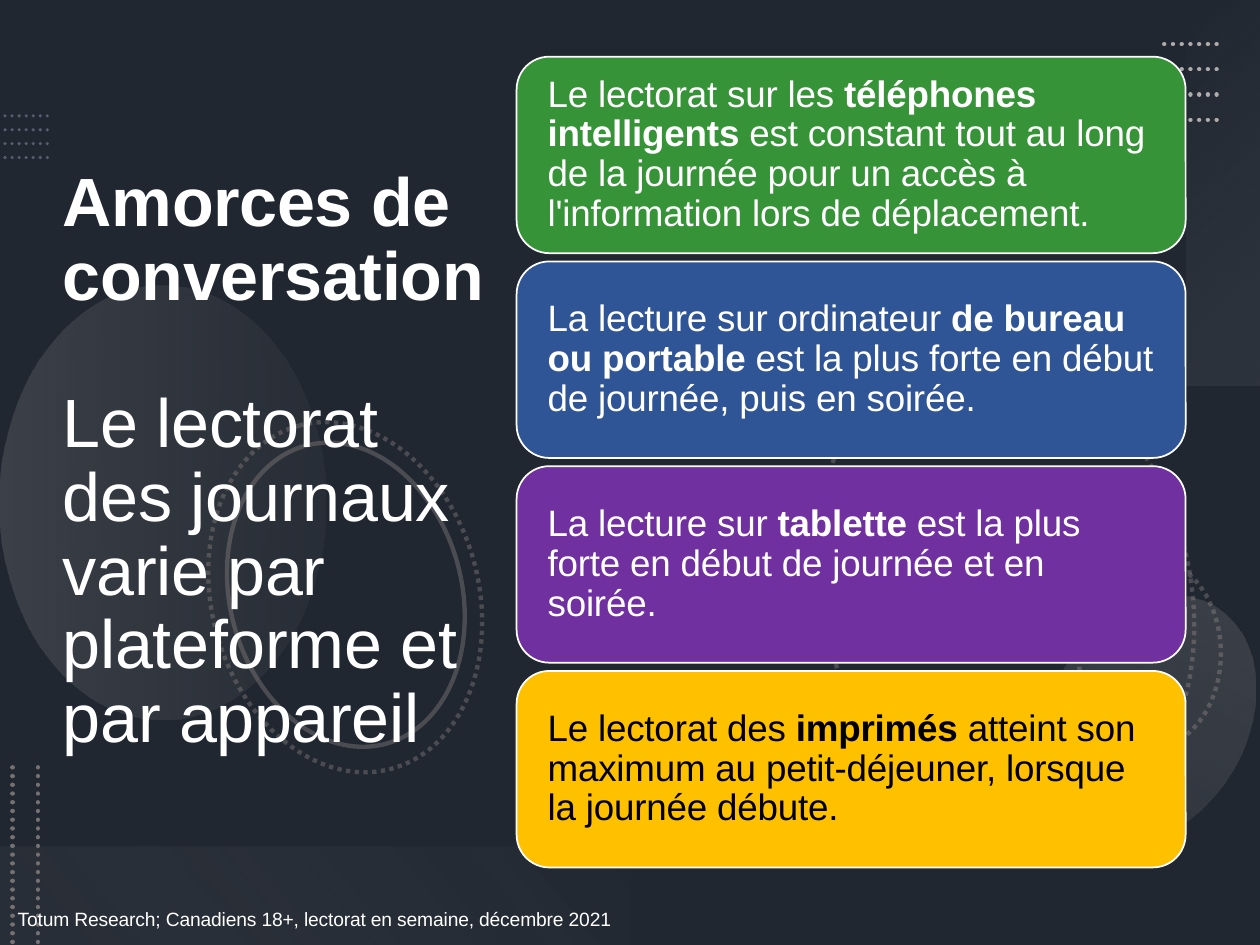
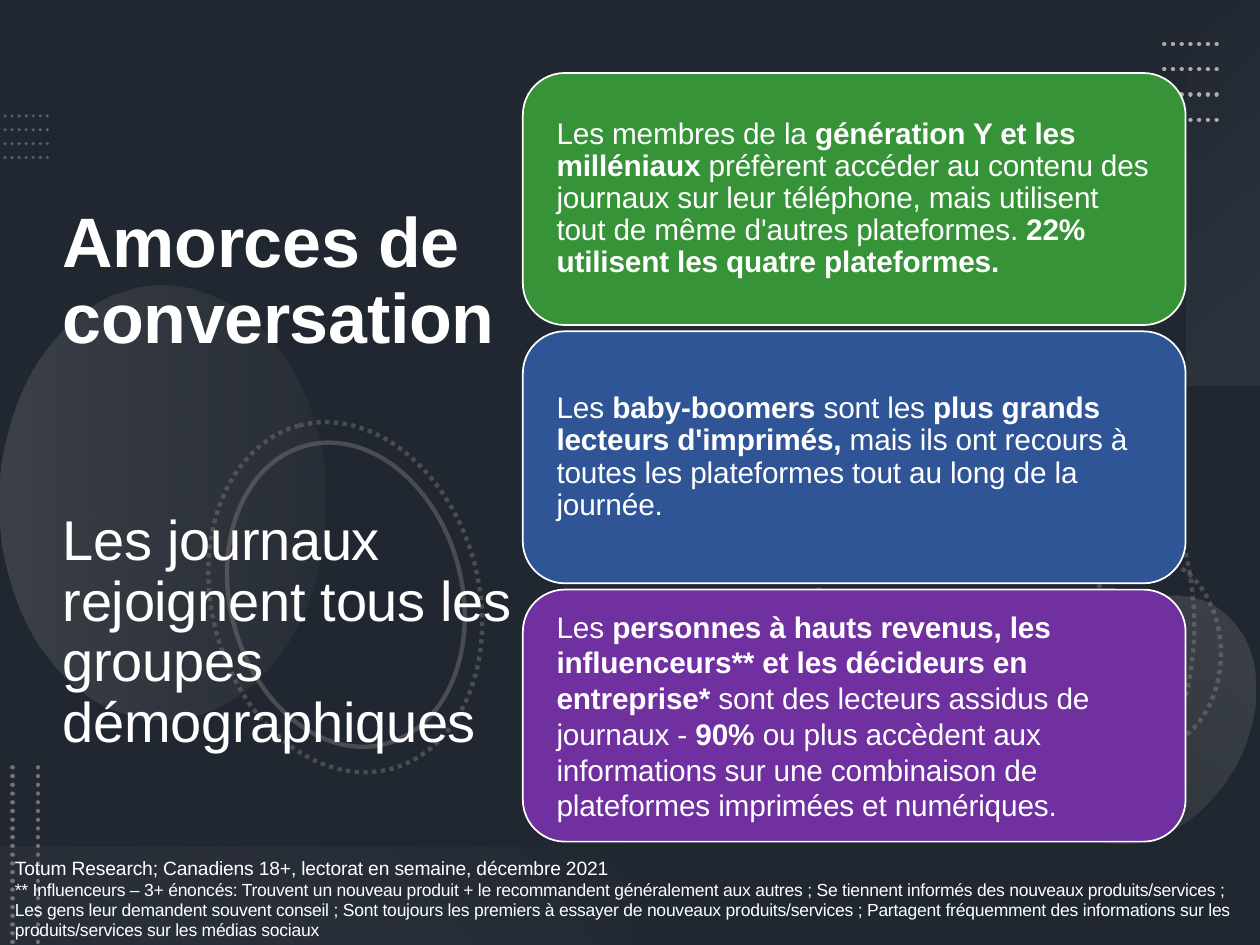
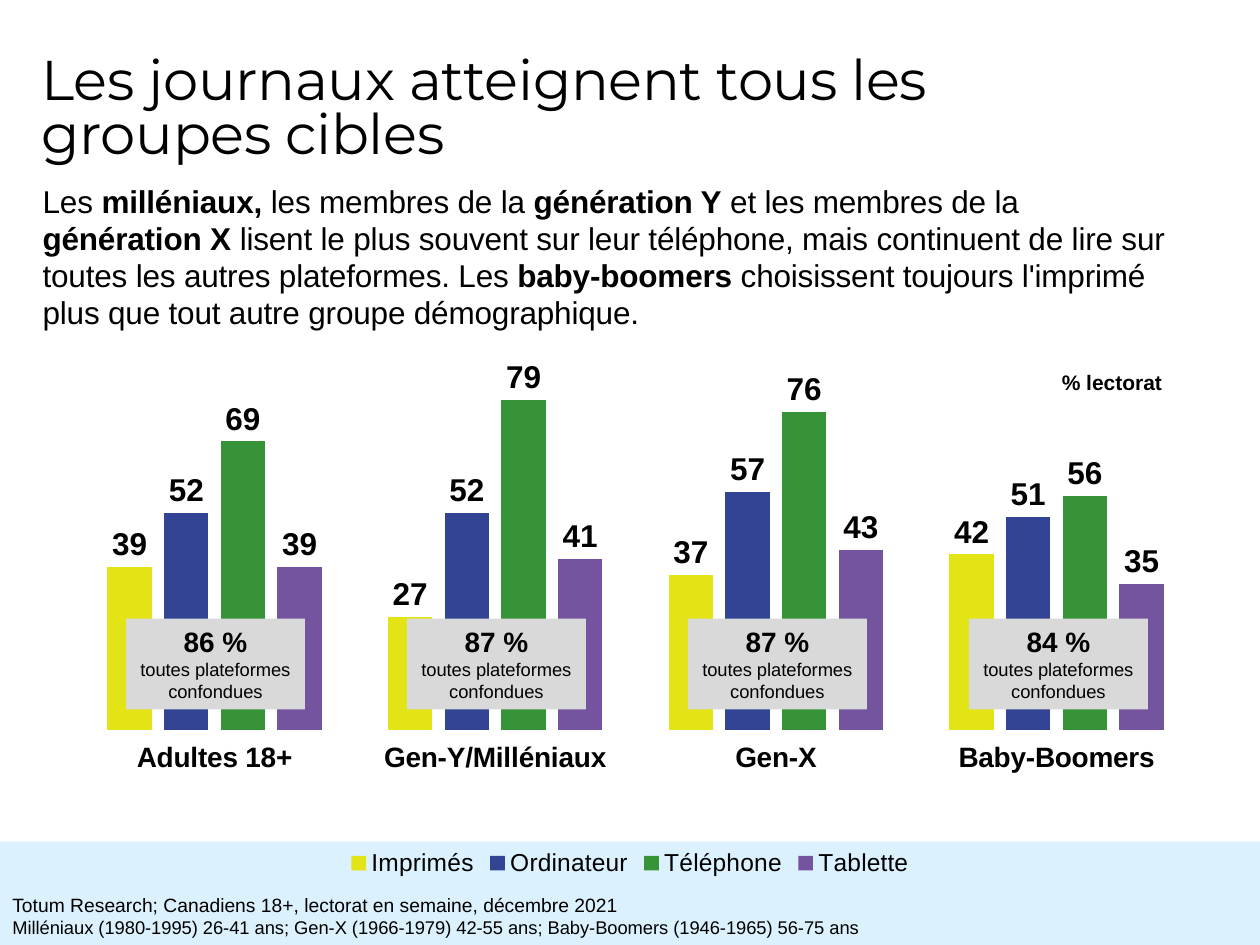
import pptx
import pptx.util
import pptx.dml.color
import pptx.chart.data
import pptx.enum.chart
import pptx.enum.dml
import pptx.enum.shapes
import pptx.enum.text
import pptx.oxml
import pptx.oxml.ns
from lxml import etree

Inches = pptx.util.Inches
Pt = pptx.util.Pt
RGB = pptx.dml.color.RGBColor
SHAPE = pptx.enum.shapes.MSO_SHAPE
ALIGN = pptx.enum.text.PP_ALIGN
ANCHOR = pptx.enum.text.MSO_ANCHOR
qn = pptx.oxml.ns.qn

WIDTH, HEIGHT = 10, 7.5
WHITE, BLACK = RGB(255, 255, 255), RGB(0, 0, 0)
SLATE, BLUE_GREY = RGB(0x44, 0x54, 0x6A), RGB(0x84, 0x97, 0xB0)
GREY, LIGHT_GREY = RGB(0x76, 0x71, 0x71), RGB(0xAF, 0xAB, 0xAB)
PALE, PALE_WARM = RGB(0xF5, 0xF5, 0xF5), RGB(0xF1, 0xF0, 0xF0)
TAG_GREY, BAND_BLUE = RGB(0xD9, 0xD9, 0xD9), RGB(0xDB, 0xF1, 0xFD)
GREEN, BLUE = RGB(0x36, 0x93, 0x37), RGB(0x2F, 0x55, 0x97)
PURPLE, AMBER = RGB(0x70, 0x30, 0xA0), RGB(0xFF, 0xC0, 0x00)
YELLOW, NAVY, VIOLET = RGB(0xE3, 0xE4, 0x16), RGB(0x33, 0x44, 0x95), RGB(0x74, 0x53, 0x9F)

SOURCE = "Totum Research; Canadiens 18+, lectorat en semaine, décembre 2021"
HEADING = "|Amorces de conversation|"

PLATFORMS = {
    "heading_box": (0.4, 0.63, 3.69, 6.08), "heading_size": 39,
    "message": "Le lectorat des journaux varie par plateforme et par appareil",
    "message_size": 39, "message_gap": 42,
    "first_card": (4.1, 0.45, 5.31, 1.56), "pitch": 1.625, "card_size": 21,
    "cards": [
        (GREEN, WHITE, 0.9, "Le lectorat sur les |téléphones intelligents| est constant tout au long "
         "de la journée pour un accès à l'information lors de déplacement."),
        (BLUE, WHITE, 0.9, "La lecture sur ordinateur |de bureau ou portable| est la plus forte "
         "en début de journée, puis en soirée."),
        (PURPLE, WHITE, 0.9, "La lecture sur |tablette| est la plus forte en début de journée et en soirée."),
        (AMBER, BLACK, 0.9, "Le lectorat des |imprimés| atteint son maximum au petit-déjeuner, "
         "lorsque la journée débute."),
    ],
}
AUDIENCES = {
    "heading_box": (0.4, 0.92, 3.83, 5.79), "heading_size": 40,
    "message": "Les journaux rejoignent tous les groupes démographiques",
    "message_size": 32, "message_gap": 88,
    "first_card": (4.15, 0.58, 5.26, 2), "pitch": 2.05, "card_size": 17,
    "cards": [
        (GREEN, WHITE, 0.9, "Les membres de la |génération Y et les milléniaux| préfèrent accéder au "
         "contenu des journaux sur leur téléphone, mais utilisent tout de même d'autres "
         "plateformes. |22% utilisent les quatre plateformes.|"),
        (BLUE, WHITE, 0.9, "Les |baby-boomers| sont les |plus grands lecteurs d'imprimés,| mais ils ont "
         "recours à toutes les plateformes tout au long de la journée."),
        (PURPLE, WHITE, 1, "Les |personnes à hauts revenus, les influenceurs** et les décideurs en "
         "entreprise*| sont des lecteurs assidus de journaux - |90%| ou plus accèdent aux "
         "informations sur une combinaison de plateformes imprimées et numériques."),
    ],
}
INFLUENCERS = (
    "** Influenceurs – 3+ énoncés: Trouvent un nouveau produit + le recommandent généralement aux "
    "autres ; Se tiennent informés des nouveaux produits/services ; Les gens leur demandent souvent "
    "conseil ; Sont toujours les premiers à essayer de nouveaux produits/services ; Partagent "
    "fréquemment des informations sur les produits/services sur les médias sociaux")

REACH_TITLE = "Les journaux atteignent tous les groupes cibles"
REACH_INTRO = (
    "Les |milléniaux,| les membres de la |génération Y| et les membres de la |génération X| lisent le "
    "plus souvent sur leur téléphone, mais continuent de lire sur toutes les autres plateformes. Les "
    "|baby-boomers| choisissent toujours l'imprimé plus que tout autre groupe démographique.")
GENERATIONS = ["Adultes 18+", "Gen-Y/Milléniaux", "Gen-X", "Baby-Boomers"]
READERSHIP = [
    ("Imprimés", YELLOW, (39, 27, 37, 42)),
    ("Ordinateur", NAVY, (52, 52, 57, 51)),
    ("Téléphone", GREEN, (69, 79, 76, 56)),
    ("Tablette", VIOLET, (39, 41, 43, 35)),
]
TOTALS = ["86 %", "87 %", "87 %", "84 %"]
AGES = "Milléniaux (1980-1995) 26-41 ans; Gen-X (1966-1979) 42-55 ans; Baby-Boomers (1946-1965) 56-75 ans"

DOTTED_ELLIPSES = [(6.03, 3.23, 3.9, 2.92, 75), (8.37, 4.62, 1.51, 1.13, 270), (1.33, 3.68, 2.82, 2.12, 75)]
PLAIN_ELLIPSE = (1.52, 3.8, 2.45, 1.84, 75)
SHADES = [
    (SHAPE.OVAL, (-0.43, 2.7, 3.44, 2.58, 270), 90, [(0, LIGHT_GREY, 20), (100, GREY, 10)]),
    (SHAPE.OVAL, (8.33, 4.67, 1.56, 2.08, 210), 90, [(0, LIGHT_GREY, 10), (100, LIGHT_GREY, 20)]),
    (SHAPE.RECTANGLE, (8.18, 1.24, 3.06, 0.58, 270), 140, [(0, PALE, 0), (100, LIGHT_GREY, 10)]),
    (SHAPE.RECTANGLE, (0, 6.72, 5, 0.78, 180), 140, [(10, GREY, 10), (100, PALE_WARM, 0)]),
]


def lengths(values):
    return [Inches(v) for v in values]


def set_alpha(holder, percent):
    color = next(holder.iter(qn("a:srgbClr")))
    etree.SubElement(color, qn("a:alpha")).set("val", str(percent * 1000))


def add_block(slide, kind, box, fill=None, outline=None, weight=1, turn=0):
    block = slide.shapes.add_shape(kind, *lengths(box))
    block.shadow.inherit = False
    block.rotation = turn
    if fill is None:
        block.fill.background()
    else:
        block.fill.solid()
        block.fill.fore_color.rgb = fill
    if outline is None:
        block.line.fill.background()
    else:
        block.line.color.rgb = outline
        block.line.width = Pt(weight)
    return block


def add_shade(slide, kind, place, angle, stops):
    block = add_block(slide, kind, place[:4], PALE, turn=place[4])
    marks = "".join(
        f'<a:gs pos="{at * 1000}"><a:srgbClr val="{color}"><a:alpha val="{alpha * 1000}"/></a:srgbClr></a:gs>'
        for at, color, alpha in stops)
    gradient = pptx.oxml.parse_xml(
        f'<a:gradFill {pptx.oxml.ns.nsdecls("a")} rotWithShape="1"><a:gsLst>{marks}</a:gsLst>'
        f'<a:lin ang="{angle * 60000}" scaled="0"/></a:gradFill>')
    solid = block._element.spPr.find(qn("a:solidFill"))
    solid.getparent().replace(solid, gradient)


def add_dots(slide, start, end, color, weight=2.5, alpha=100):
    dots = slide.shapes.add_connector(
        pptx.enum.shapes.MSO_CONNECTOR.STRAIGHT, *lengths(start + end))
    dots.line.color.rgb = color
    dots.line.width = Pt(weight)
    dots.line.dash_style = pptx.enum.dml.MSO_LINE.ROUND_DOT
    spPr = dots._element.spPr
    spPr.find(qn("a:ln")).set("cap", "rnd")
    if alpha < 100:
        set_alpha(spPr, alpha)
    etree.SubElement(spPr, qn("a:effectLst"))


def write(frame, rows, color=BLACK, align=ALIGN.LEFT, anchor=ANCHOR.TOP, font="Arial", track=-0.1,
          insets=(0.1, 0.05, 0.1, 0.05)):
    frame.word_wrap = True
    frame.vertical_anchor = anchor
    frame.margin_left, frame.margin_top, frame.margin_right, frame.margin_bottom = lengths(insets)
    for index, (text, size, spacing, before) in enumerate(rows):
        paragraph = frame.paragraphs[0] if index == 0 else frame.add_paragraph()
        paragraph.alignment = align
        paragraph.line_spacing = spacing
        paragraph.space_before = Pt(before)
        pieces = text.split("|")
        all_bold = len(pieces) == 3 and not pieces[0] and not pieces[2]
        paragraph.font.name = font
        paragraph.font.size = Pt(size)
        paragraph.font.color.rgb = color
        paragraph.font.bold = all_bold
        for order, piece in enumerate(pieces):
            if piece:
                run = paragraph.add_run()
                run.text = piece
                run._r.get_or_add_rPr().set("spc", str(round(track * 100)))
                if order % 2 and not all_bold:
                    run.font.bold = True


def add_text(slide, box, rows, **style):
    write(slide.shapes.add_textbox(*lengths(box)).text_frame, rows, **style)


def set_background(slide, color):
    slide.background.fill.solid()
    slide.background.fill.fore_color.rgb = color


def decorate(slide):
    set_background(slide, SLATE)
    veil = add_block(slide, SHAPE.RECTANGLE, (0, 0, WIDTH, HEIGHT), BLACK)
    set_alpha(veil._element.spPr, 53)
    for row in range(4):
        left_y, right_y = 0.92 + 0.11 * row, 0.35 + 0.2 * row
        add_dots(slide, (0.04, left_y), (0.4, left_y), BLUE_GREY, 2, 50)
        add_dots(slide, (9.24, right_y), (9.69, right_y), LIGHT_GREY)
    for place in DOTTED_ELLIPSES + [PLAIN_ELLIPSE]:
        ring = add_block(slide, SHAPE.OVAL, place[:4], None, GREY, 2.5, place[4])
        if place is not PLAIN_ELLIPSE:
            ring.line.dash_style = pptx.enum.dml.MSO_LINE.ROUND_DOT
        set_alpha(ring._element.spPr.find(qn("a:ln")), 50)
    for shade in SHADES:
        add_shade(slide, *shade)
    for x in (0.1, 0.3):
        add_dots(slide, (x, 6.09), (x, HEIGHT), GREY)


def add_starter_slide(deck, content):
    slide = deck.slides.add_slide(deck.slide_layouts[6])
    decorate(slide)
    add_text(slide, content["heading_box"], [
        (HEADING, content["heading_size"], 0.9, 0),
        (content["message"], content["message_size"], 0.9, content["message_gap"]),
    ], color=WHITE, anchor=ANCHOR.MIDDLE, track=-0.2)
    x, y, width, height = content["first_card"]
    for index, (fill, ink, spacing, text) in enumerate(content["cards"]):
        card = add_block(slide, SHAPE.ROUNDED_RECTANGLE,
                         (x, y + index * content["pitch"], width, height), fill, WHITE)
        write(card.text_frame, [(text, content["card_size"], spacing, 0)], color=ink,
              anchor=ANCHOR.MIDDLE, insets=(0.17, 0.1, 0.17, 0.1))
    return slide


def add_readership_chart(slide):
    data = pptx.chart.data.CategoryChartData()
    data.categories = GENERATIONS
    for name, color, values in READERSHIP:
        data.add_series(name, values)
    chart = slide.shapes.add_chart(
        pptx.enum.chart.XL_CHART_TYPE.COLUMN_CLUSTERED, *lengths((0.5, 2.17, 9, 4.83)), data).chart
    chart.has_title = False
    chart.font.name, chart.font.size, chart.font.color.rgb = "Arial", Pt(18), BLACK
    chart.has_legend = True
    chart.legend.position = pptx.enum.chart.XL_LEGEND_POSITION.BOTTOM
    chart.legend.include_in_layout = False
    chart.legend.font.size = Pt(14)
    values_axis, groups_axis = chart.value_axis, chart.category_axis
    values_axis.visible = False
    values_axis.has_major_gridlines = False
    values_axis.minimum_scale, values_axis.maximum_scale = 0, 90
    groups_axis.format.line.fill.background()
    groups_axis.tick_labels.font.size = Pt(16)
    groups_axis.tick_labels.font.bold = True
    plot = chart.plots[0]
    plot.gap_width, plot.overlap, plot.vary_by_categories = 150, -28, False
    for series, (name, color, values) in zip(plot.series, READERSHIP):
        series.format.fill.solid()
        series.format.fill.fore_color.rgb = color
        labels = series.data_labels
        labels.show_value = True
        labels.position = pptx.enum.chart.XL_LABEL_POSITION.OUTSIDE_END
        labels.font.size, labels.font.bold = Pt(18), True
    area = chart._chartSpace.chart.plotArea
    for old in area.findall(qn("c:layout")):
        area.remove(old)
    settings = [("layoutTarget", "inner"), ("xMode", "edge"), ("yMode", "edge"),
                ("x", 0.01), ("y", 0.132), ("w", 0.99), ("h", 0.619)]
    entries = "".join(f'<c:{tag} val="{value}"/>' for tag, value in settings)
    area.insert(0, pptx.oxml.parse_xml(
        f'<c:layout {pptx.oxml.ns.nsdecls("c")}><c:manualLayout>{entries}</c:manualLayout></c:layout>'))


def add_reach_slide(deck):
    slide = deck.slides.add_slide(deck.slide_layouts[6])
    set_background(slide, WHITE)
    add_block(slide, SHAPE.RECTANGLE, (0, 6.68, WIDTH, 0.82), BAND_BLUE)
    add_readership_chart(slide)
    add_text(slide, (0.23, 0.41, 8.2, 0.97), [(REACH_TITLE, 32, 0.8, 0)], font="Montserrat", track=-0.2)
    add_text(slide, (0.24, 1.41, 9.2, 1.27), [(REACH_INTRO, 18, 0.98, 0)])
    add_text(slide, (8.15, 2.88, 1.35, 0.3), [("|% lectorat|", 12, 1, 0)], align=ALIGN.CENTER, track=0)
    add_text(slide, (0, 7.04, 8.17, 0.46), [(SOURCE, 11, 1, 0), (AGES, 10.5, 1, 0)], track=0)
    for index, total in enumerate(TOTALS):
        tag = add_block(slide, SHAPE.RECTANGLE, (1 + 2.23 * index, 4.91, 1.42, 0.72), TAG_GREY)
        write(tag.text_frame, [(f"|{total}|", 16, 1, 0), ("toutes plateformes confondues", 10.5, 1, 0)],
              align=ALIGN.CENTER, track=0)


def main():
    deck = pptx.Presentation()
    deck.slide_width, deck.slide_height = lengths((WIDTH, HEIGHT))
    platforms = add_starter_slide(deck, PLATFORMS)
    add_text(platforms, (0.14, 7.19, 4.9, 0.21), [(SOURCE, 11, 1, 0)], color=WHITE, insets=(0, 0.01, 0, 0))
    audiences = add_starter_slide(deck, AUDIENCES)
    add_text(audiences, (0.02, 6.75, 9.85, 0.75),
             [(SOURCE, 11, Pt(13.1), 0), (INFLUENCERS, 10, 0.96, 0.3)], color=WHITE)
    add_reach_slide(deck)
    deck.save("out.pptx")


if __name__ == "__main__":
    main()
